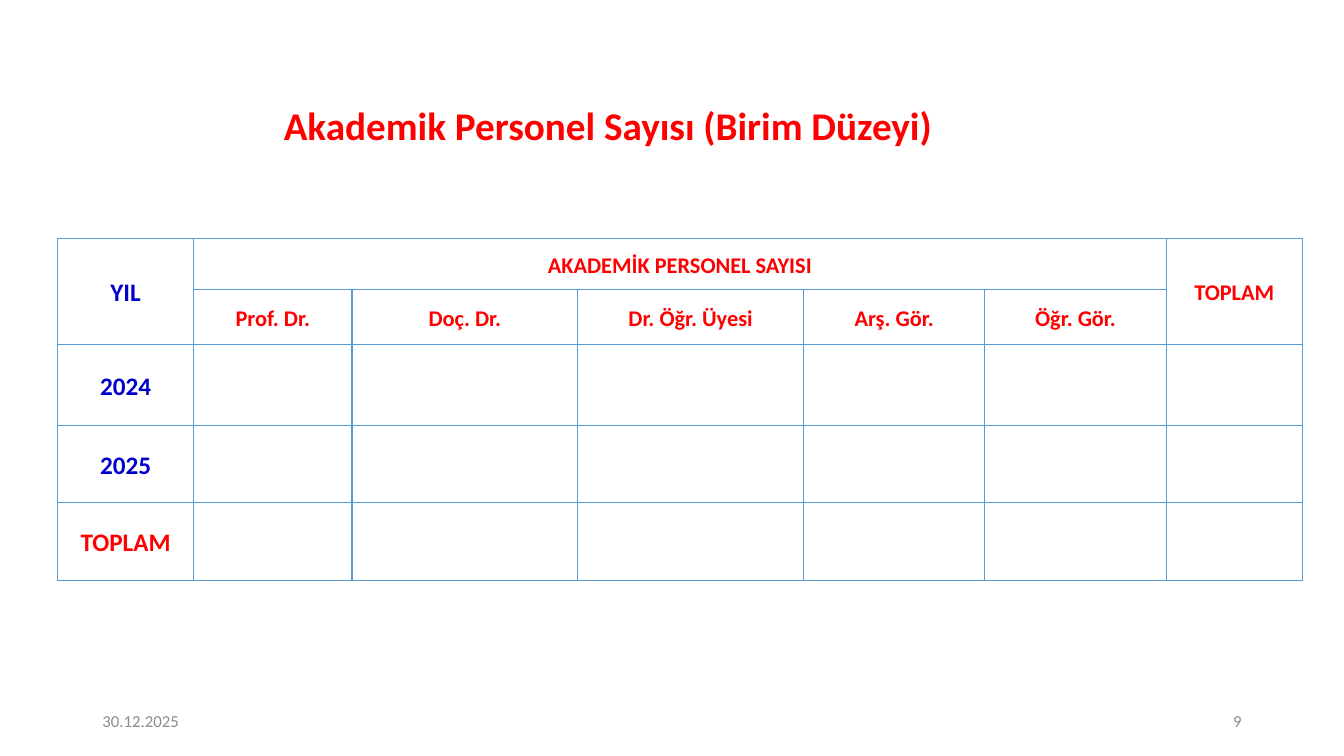
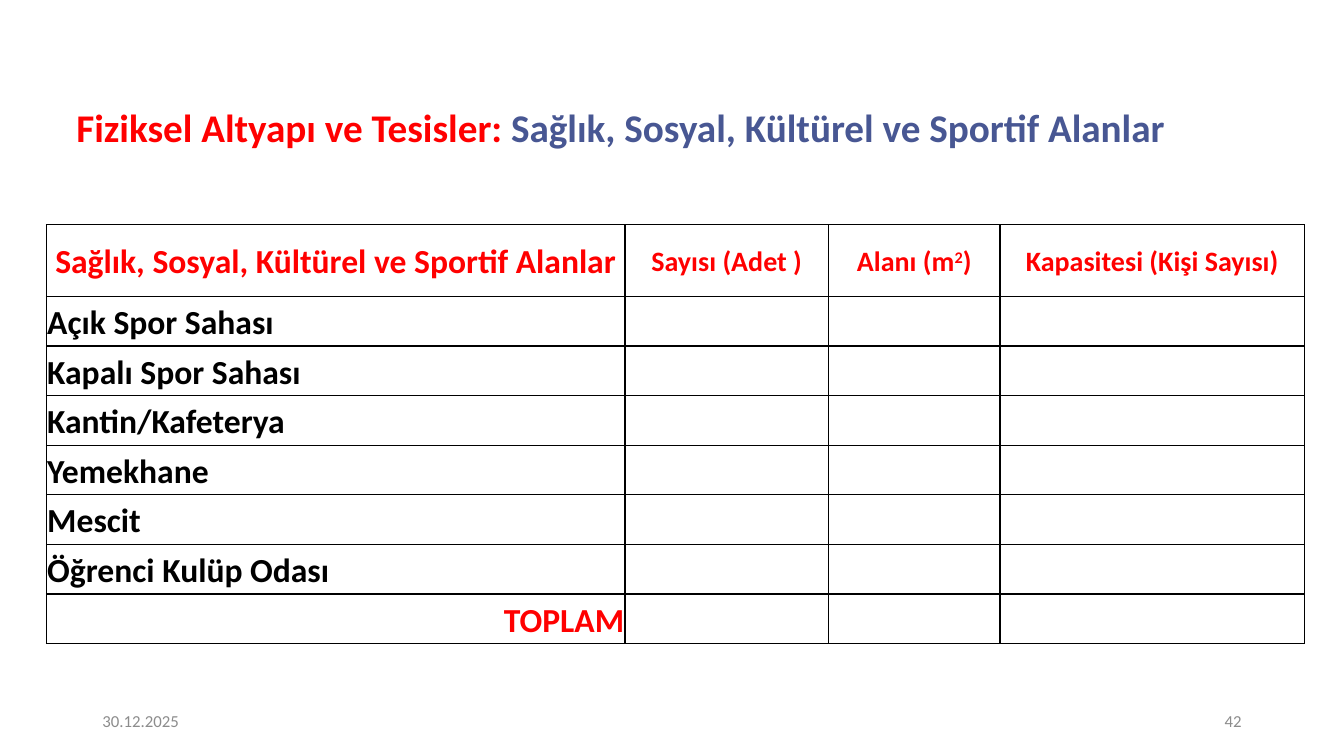
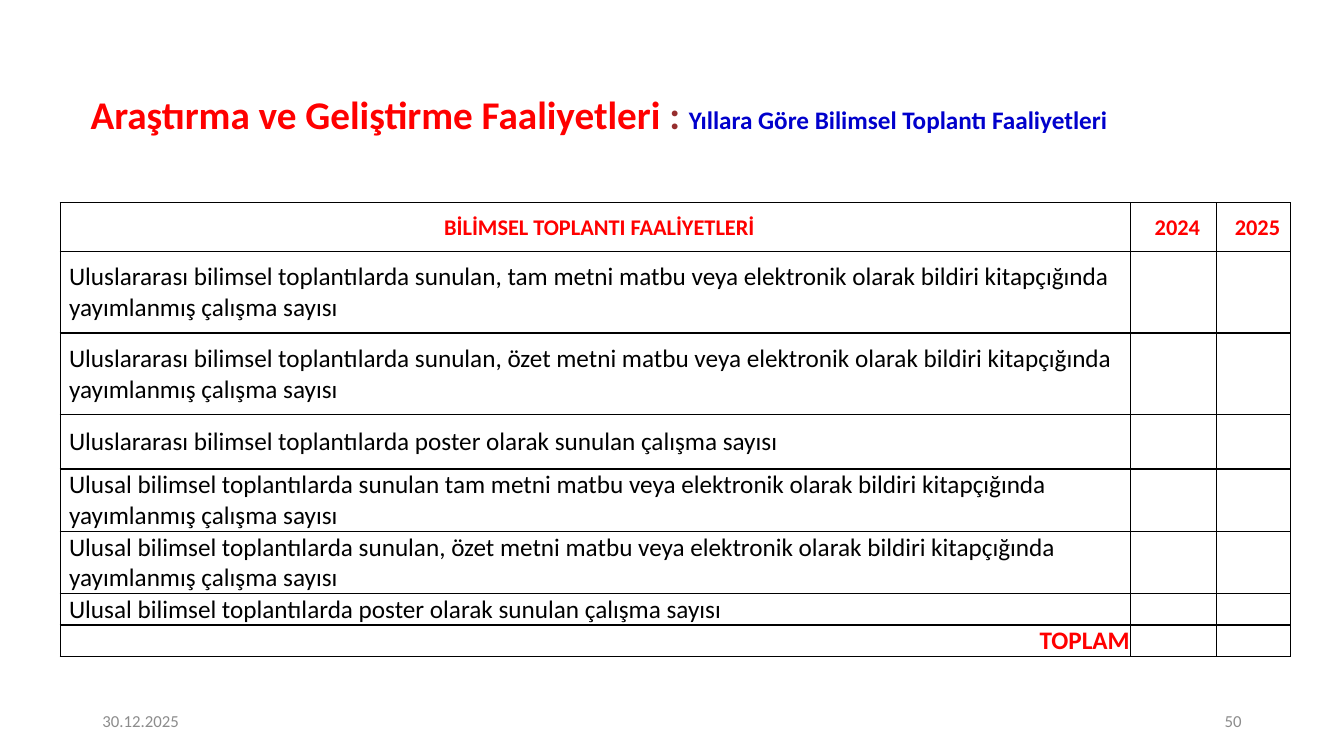
from lxml import etree
from pptx import Presentation
from pptx.dml.color import RGBColor
from pptx.enum.text import MSO_ANCHOR, MSO_AUTO_SIZE, PP_ALIGN
from pptx.oxml.ns import qn
from pptx.util import Cm, Pt

LEFT, CENTER, RIGHT = PP_ALIGN.LEFT, PP_ALIGN.CENTER, PP_ALIGN.RIGHT
MIDDLE, NO_FIT = MSO_ANCHOR.MIDDLE, MSO_AUTO_SIZE.NONE

FONT = "Calibri"
RED = RGBColor(0xFF, 0x00, 0x00)
BLUE = RGBColor(0x00, 0x00, 0xCC)
SLATE = RGBColor(0x48, 0x57, 0x93)
BROWN = RGBColor(0x96, 0x2E, 0x2E)
GREY = RGBColor(0x8C, 0x8C, 0x8C)
BLACK = RGBColor(0x00, 0x00, 0x00)
SKY = RGBColor(0x5B, 0x9B, 0xD5)

TITLE_SIZE = 28
DATE = "30.12.2025"
FOOTER_TOP, FOOTER_WIDTH, FOOTER_HEIGHT = 17.65, 7.62, 1.01
DATE_LEFT, NUMBER_LEFT = 2.33, 23.92

# Cell formats
RED_16 = dict(size=16, color=RED, bold=True)
RED_18 = dict(size=18, color=RED, bold=True)
RED_20 = dict(size=20, color=RED, bold=True)
RED_24 = dict(size=24, color=RED, bold=True)
BLUE_18 = dict(size=18, color=BLUE, bold=True)
BLACK_24 = dict(size=24, color=BLACK, bold=True, align=LEFT)
BLACK_18 = dict(size=18, color=BLACK, align=LEFT)

# Content: each cell is keyed by (row, column) and holds its text and format
STAFF_CELLS = {
    (0, 0): ("YIL", BLUE_18),
    (0, 1): ("AKADEMİK PERSONEL SAYISI", RED_16),
    (0, 6): ("TOPLAM", RED_16),
    (2, 0): ("2024", BLUE_18),
    (3, 0): ("2025", BLUE_18),
    (4, 0): ("TOPLAM", RED_18),
}
STAFF_RANKS = ["Prof. Dr.", "Doç. Dr.", "Dr. Öğr. Üyesi", "Arş. Gör.", "Öğr. Gör."]
for column, rank in enumerate(STAFF_RANKS, start=1):
    STAFF_CELLS[1, column] = (rank, RED_16)

FACILITY_CELLS = {
    (0, 0): ("Sağlık, Sosyal, Kültürel ve Sportif Alanlar", RED_24),
    (0, 1): ("Sayısı (Adet )", RED_20),
    (0, 2): ([("Alanı (m", {}), ("2", {"raised": True}), (")", {})], RED_20),
    (0, 3): ("Kapasitesi (Kişi Sayısı)", RED_20),
    (7, 0): ("TOPLAM", dict(RED_24, align=RIGHT)),
}
FACILITIES = ["Açık Spor Sahası", "Kapalı Spor Sahası", "Kantin/Kafeterya",
              "Yemekhane", "Mescit", "Öğrenci Kulüp Odası"]
for row, facility in enumerate(FACILITIES, start=1):
    FACILITY_CELLS[row, 0] = (facility, BLACK_24)

MEETING_CELLS = {
    (0, 0): ("BİLİMSEL TOPLANTI FAALİYETLERİ", RED_16),
    (0, 1): ("2024", RED_16),
    (0, 2): ("2025", RED_16),
    (7, 0): ("TOPLAM", dict(RED_18, align=RIGHT)),
}
MEETINGS = [
    "Uluslararası bilimsel toplantılarda sunulan, tam metni matbu veya elektronik "
    "olarak bildiri kitapçığında yayımlanmış çalışma sayısı",
    "Uluslararası bilimsel toplantılarda sunulan, özet metni matbu veya elektronik "
    "olarak bildiri kitapçığında yayımlanmış çalışma sayısı",
    "Uluslararası bilimsel toplantılarda poster olarak sunulan çalışma sayısı",
    "Ulusal bilimsel toplantılarda sunulan tam metni matbu veya elektronik "
    "olarak bildiri kitapçığında yayımlanmış çalışma sayısı",
    "Ulusal bilimsel toplantılarda sunulan, özet metni matbu veya elektronik "
    "olarak bildiri kitapçığında yayımlanmış çalışma sayısı",
    "Ulusal bilimsel toplantılarda poster olarak sunulan çalışma sayısı",
]
for row, meeting in enumerate(MEETINGS, start=1):
    MEETING_CELLS[row, 0] = (meeting, BLACK_18)

# Slides: places and sizes in centimetres
SLIDES = [
    dict(
        number="9",
        title=[("Akademik Personel Sayısı (Birim Düzeyi)", {})],
        title_at=(0.94, 2.41, 28.75, 1.63),
        table_at=(1.45, 6.02),
        columns=[3.43, 3.99, 5.69, 5.69, 4.57, 4.57, 3.43],
        rows=[1.27, 1.4, 2.03, 1.95, 1.95],
        cells=STAFF_CELLS,
        merges=[((0, 0), (1, 0)), ((0, 1), (0, 5)), ((0, 6), (1, 6))],
        border=SKY,
        paragraph=dict(spacing=1.07),
    ),
    dict(
        number="42",
        title=[("Fiziksel Altyapı ve Tesisler: ", {}),
               ("Sağlık, Sosyal, Kültürel ve Sportif Alanlar", {"color": SLATE})],
        title_at=(1.55, 2.39, 28.17, 1.78),
        table_at=(1.17, 5.66),
        columns=[14.58, 5.13, 4.32, 7.67],
        rows=[1.81] + [1.25] * 7,
        cells=FACILITY_CELLS,
        merges=[],
        border=BLACK,
        paragraph=dict(spacing=1.07),
    ),
    dict(
        number="50",
        title=[("Araştırma ve Geliştirme Faaliyetleri ", {}),
               (": ", {"color": BROWN}),
               ("Yıllara Göre Bilimsel Toplantı Faaliyetleri ",
                {"color": BLUE, "size": 18})],
        title_at=(0.64, 2.08, 29.06, 1.73),
        table_at=(1.52, 5.11),
        columns=[26.97, 2.16, 1.88],
        rows=[1.22, 2.06, 2.06, 1.37, 1.57, 1.57, 0.79, 0.79],
        cells=MEETING_CELLS,
        merges=[],
        border=BLACK,
        paragraph=dict(indent=0.2),
    ),
]


def write_text(frame, text, size=18, color=BLACK, bold=False, align=CENTER,
               spacing=1.0, indent=0):
    """Write a string, or a list of (text, changes) spans, as one paragraph."""
    para = frame.paragraphs[0]
    para.alignment = align
    para.line_spacing = spacing
    if indent:
        para._p.get_or_add_pPr().set("marL", str(Cm(indent)))
    for words, changes in [(text, {})] if isinstance(text, str) else text:
        span = para.add_run()
        span.text = words
        span.font.name = FONT
        span.font.size = Pt(changes.get("size", size))
        span.font.bold = bold
        span.font.color.rgb = changes.get("color", color)
        if changes.get("raised"):
            span.font._element.set("baseline", "30000")


def add_title(page, spans, place):
    title = page.shapes.title
    title.left, title.top, title.width, title.height = map(Cm, place)
    frame = title.text_frame
    frame.word_wrap = True
    frame.auto_size = NO_FIT
    frame.vertical_anchor = MIDDLE
    write_text(frame, spans, size=TITLE_SIZE, color=RED, bold=True, spacing=0.9)


def add_footer(page, text, left, align):
    box = page.shapes.add_textbox(Cm(left), Cm(FOOTER_TOP),
                                  Cm(FOOTER_WIDTH), Cm(FOOTER_HEIGHT))
    frame = box.text_frame
    frame.word_wrap = True
    frame.vertical_anchor = MIDDLE
    write_text(frame, text, size=12, color=GREY, align=align)


def set_borders(cell, color):
    properties = cell._tc.get_or_add_tcPr()
    for position, side in enumerate(["a:lnL", "a:lnR", "a:lnT", "a:lnB"]):
        line = etree.Element(qn(side), w=str(Pt(1)))
        fill = etree.SubElement(line, qn("a:solidFill"))
        etree.SubElement(fill, qn("a:srgbClr"), val=str(color))
        properties.insert(position, line)


def add_grid(page, content):
    columns, rows = content["columns"], content["rows"]
    left, top = content["table_at"]
    table = page.shapes.add_table(len(rows), len(columns), Cm(left), Cm(top),
                                  Cm(sum(columns)), Cm(sum(rows))).table
    table.first_row = table.horz_banding = False
    for column, width in zip(table.columns, columns):
        column.width = Cm(width)
    for row, height in zip(table.rows, rows):
        row.height = Cm(height)
    for cell in table.iter_cells():
        cell.margin_left = cell.margin_right = cell.margin_top = Cm(0.02)
        cell.margin_bottom = 0
        cell.vertical_anchor = MIDDLE
        cell.fill.background()
        set_borders(cell, content["border"])
    for first, last in content["merges"]:
        table.cell(*first).merge(table.cell(*last))
    for place, (text, style) in content["cells"].items():
        write_text(table.cell(*place).text_frame, text,
                   **style, **content["paragraph"])


def main():
    deck = Presentation()
    deck.slide_width, deck.slide_height = Cm(33.87), Cm(19.05)
    title_only = deck.slide_layouts[5]
    for content in SLIDES:
        page = deck.slides.add_slide(title_only)
        add_title(page, content["title"], content["title_at"])
        add_footer(page, DATE, DATE_LEFT, LEFT)
        add_footer(page, content["number"], NUMBER_LEFT, RIGHT)
        add_grid(page, content)
    deck.save("out.pptx")


if __name__ == "__main__":
    main()
